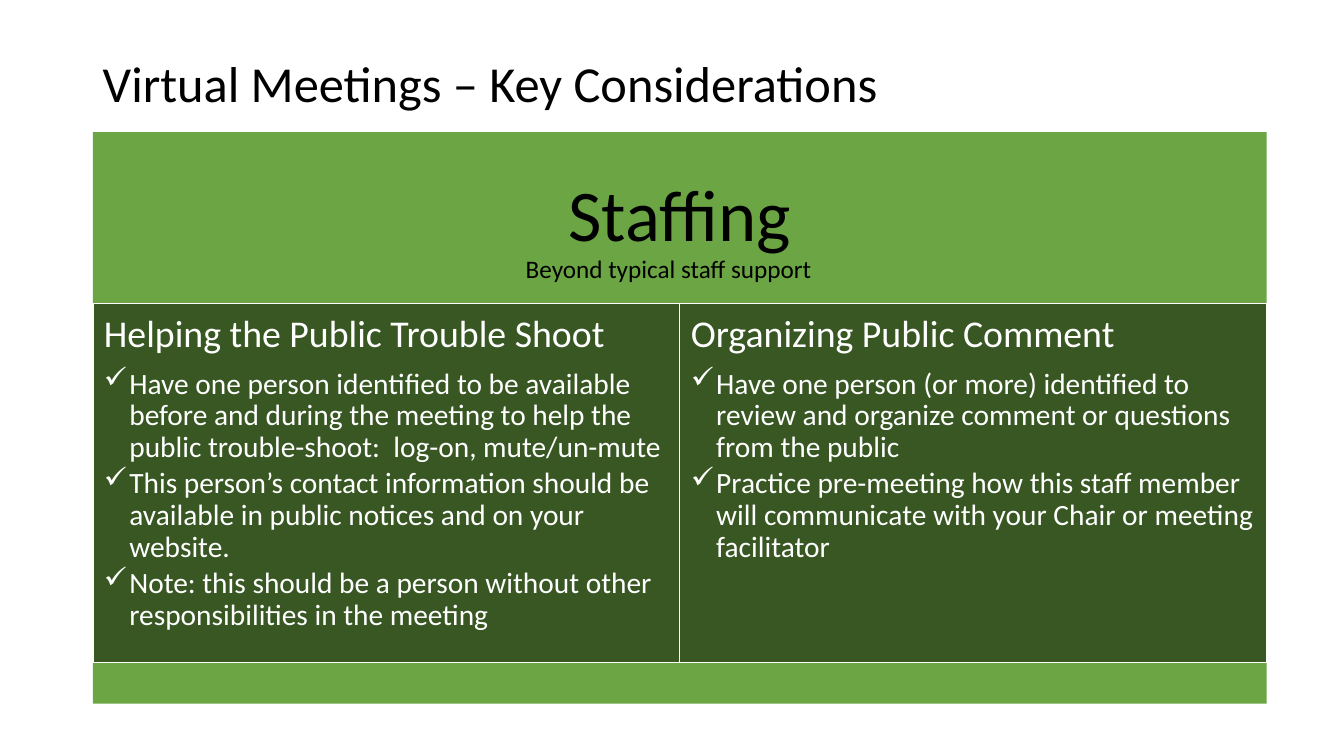
from dataclasses import dataclass

from lxml import etree
from pptx import Presentation
from pptx.dml.color import RGBColor
from pptx.enum.shapes import MSO_SHAPE
from pptx.enum.text import MSO_ANCHOR, MSO_AUTO_SIZE, PP_ALIGN
from pptx.oxml.ns import qn
from pptx.util import Cm, Pt

RECT = MSO_SHAPE.RECTANGLE
TOP, MIDDLE = MSO_ANCHOR.TOP, MSO_ANCHOR.MIDDLE
LEFT, CENTER = PP_ALIGN.LEFT, PP_ALIGN.CENTER
GROW = MSO_AUTO_SIZE.SHAPE_TO_FIT_TEXT


@dataclass(frozen=True)
class Theme:
    font: str = "Calibri"
    black: RGBColor = RGBColor(0, 0, 0)
    white: RGBColor = RGBColor(255, 255, 255)
    green: RGBColor = RGBColor(0x6B, 0xA5, 0x44)
    dark: RGBColor = RGBColor(0x38, 0x57, 0x23)
    title: int = 36
    banner: int = 52
    head: int = 27
    body: int = 21
    note: int = 18


@dataclass(frozen=True)
class Box:
    x: float
    y: float
    w: float
    h: float

    def place(self):
        return Cm(self.x), Cm(self.y), Cm(self.w), Cm(self.h)


@dataclass(frozen=True)
class Panel:
    head: str
    items: tuple[str, ...]


THEME = Theme()
EDGE, WIDTH = 2.34, 29.58
HALF = WIDTH / 2
INDENT = 0.64
BANNER = Box(EDGE, 3.33, WIDTH, 4.32)
BODY_Y, BODY_H = 7.65, 9.06
FOOT = Box(EDGE, BODY_Y + BODY_H, WIDTH, 1.02)

PANELS = (
    Panel("Helping the Public Trouble Shoot", (
        "Have one person identified to be available before and during the "
        "meeting to help the public trouble-shoot:  log-on, mute/un-mute",
        "This person’s contact information should be available in public "
        "notices and on your website.",
        "Note: this should be a person without other responsibilities in "
        "the meeting",
    )),
    Panel("Organizing Public Comment", (
        "Have one person (or more) identified to review and organize comment "
        "or questions from the public",
        "Practice pre-meeting how this staff member will communicate with "
        "your Chair or meeting facilitator",
    )),
)


def add_rect(slide, box: Box, fill: RGBColor, line: RGBColor | None = None):
    """Draw a flat rectangle, with a thin outline if asked."""
    rect = slide.shapes.add_shape(RECT, *box.place())
    rect.shadow.inherit = False
    rect.fill.solid()
    rect.fill.fore_color.rgb = fill
    if line is None:
        rect.line.fill.background()
    else:
        rect.line.color.rgb = line
        rect.line.width = Pt(1)
    return rect


def set_frame(frame, anchor, inset: float) -> None:
    """Set wrapping, anchor and equal insets."""
    frame.word_wrap = True
    frame.vertical_anchor = anchor
    frame.margin_left = frame.margin_right = Cm(inset)
    frame.margin_top = frame.margin_bottom = Cm(inset)


def add_text(par, text: str, size: int, color: RGBColor, align=LEFT,
             lines: float = 0.9, after: float = 0) -> None:
    """Write one run; the gap after is a share of the type size."""
    par.alignment = align
    par.line_spacing = lines
    par.space_before = Pt(0)
    par.space_after = Pt(size * after)
    run = par.add_run()
    run.text = text
    run.font.name = THEME.font
    run.font.size = Pt(size)
    run.font.color.rgb = color


def add_check(par) -> None:
    """Give a paragraph a hanging check mark."""
    par.level = 1
    props = par._p.get_or_add_pPr()
    props.set("marL", str(Cm(INDENT)))
    props.set("indent", str(-Cm(INDENT)))
    etree.SubElement(props, qn("a:buChar")).set("char", "✓")


def add_panel(slide, panel: Panel, box: Box) -> None:
    """Draw a dark panel with a heading and checked items."""
    frame = add_rect(slide, box, THEME.dark, THEME.white).text_frame
    set_frame(frame, TOP, 0.28)
    add_text(frame.paragraphs[0], panel.head, THEME.head, THEME.white,
             after=0.35)
    for item in panel.items:
        par = frame.add_paragraph()
        add_text(par, item, THEME.body, THEME.white, after=0.15)
        add_check(par)


def main() -> None:
    deck = Presentation()
    deck.slide_width, deck.slide_height = Cm(33.87), Cm(19.05)
    slide = deck.slides.add_slide(deck.slide_layouts[6])

    # Title
    title = slide.shapes.add_textbox(*Box(EDGE, 1.02, 29.21, 2.31).place())
    set_frame(title.text_frame, MIDDLE, 0.25)
    add_text(title.text_frame.paragraphs[0],
             "Virtual Meetings – Key Considerations", THEME.title, THEME.black)

    # Banner
    frame = add_rect(slide, BANNER, THEME.green).text_frame
    set_frame(frame, MIDDLE, 0.56)
    add_text(frame.paragraphs[0], "Staffing", THEME.banner, THEME.black,
             CENTER, after=0.35)

    # Two panels side by side
    for col, panel in enumerate(PANELS):
        add_panel(slide, panel,
                  Box(EDGE + col * HALF, BODY_Y, HALF, BODY_H))

    # Bottom band
    add_rect(slide, FOOT, THEME.green)

    # Note inside the banner
    note = slide.shapes.add_textbox(*Box(13, 6.25, 7.82, 1.04).place())
    note.text_frame.word_wrap = True
    note.text_frame.auto_size = GROW
    add_text(note.text_frame.paragraphs[0], "Beyond typical staff support",
             THEME.note, THEME.black, lines=1.0)

    deck.save("out.pptx")


if __name__ == "__main__":
    main()
